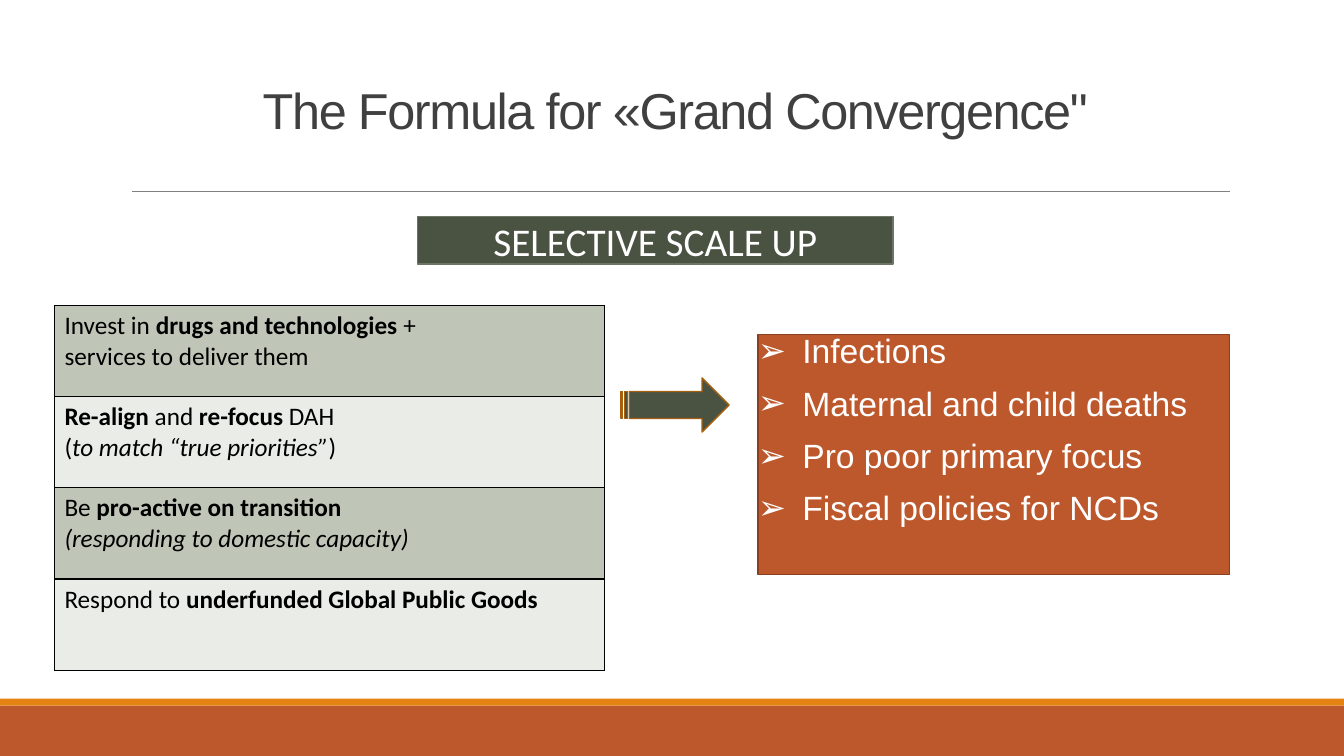
import pptx
import pptx.util
import pptx.dml.color
import pptx.enum.shapes
import pptx.enum.text
import pptx.oxml
import pptx.oxml.ns
from lxml import etree

HUES = {"rust": "BD582C", "brown": "8A4020", "amber": "E48312", "ochre": "A6600D",
        "moss": "4A5242", "sage": "6C7563", "leaf": "BFC6B8", "mist": "EAECE7",
        "grey": "808080", "ink": "404040", "black": "000000", "white": "FFFFFF"}
FORMS = pptx.enum.shapes.MSO_SHAPE
ALIGN = pptx.enum.text.PP_ALIGN
ANCHOR = pptx.enum.text.MSO_ANCHOR
Pt = pptx.util.Pt


def hue(name):
    return pptx.dml.color.RGBColor.from_string(HUES[name])


def node(root, tag, **attrs):
    return etree.SubElement(root, pptx.oxml.ns.qn(tag), attrs)


class Deck:
    """Holds the style and the slide; lengths are percent of the slide's size."""

    def __init__(self):
        self.show = pptx.Presentation()
        self.show.slide_width = pptx.util.Inches(13.33)
        self.show.slide_height = pptx.util.Inches(7.5)
        self.slide = self.show.slides.add_slide(self.show.slide_layouts[5])
        self.shapes = self.slide.shapes

    def box(self, x, y, w, h):
        wide, high = self.show.slide_width, self.show.slide_height
        return [int(part * side / 100)
                for part, side in zip((x, y, w, h), (wide, high, wide, high))]

    def style(self, para, face, size, color):
        font = para.font
        font.name, font.size = face, Pt(size)
        font.color.rgb = hue(color)

    def title(self, text, *place):
        head = self.shapes.title
        head.left, head.top, head.width, head.height = self.box(*place)
        frame = head.text_frame
        frame.vertical_anchor = ANCHOR.BOTTOM
        self.inset(frame, 3.6)
        para = frame.paragraphs[0]
        run = para.add_run()
        run.text = text
        run.font._element.set("spc", "-100")
        para.alignment, para.line_spacing = ALIGN.CENTER, 0.85
        self.style(para, "Arial", 36, "ink")

    def inset(self, frame, gap):
        frame.word_wrap = True
        frame.margin_left = frame.margin_right = Pt(gap)
        frame.margin_top = frame.margin_bottom = Pt(gap)

    def shape(self, form, place, fill, edge=None):
        item = self.shapes.add_shape(form, *self.box(*place))
        item.shadow.inherit = False
        item.fill.solid()
        item.fill.fore_color.rgb = hue(fill)
        if edge:
            item.line.color.rgb = hue(edge)
            item.line.width = Pt(1)
        else:
            item.line.fill.background()
        return item

    def rule(self, left, right, y, color):
        x, top, end, _ = self.box(left, y, right, 0)
        line = self.shapes.add_connector(
            pptx.enum.shapes.MSO_CONNECTOR.STRAIGHT, x, top, end, top)
        line.line.color.rgb = hue(color)
        line.line.width = Pt(0.5)
        node(line._element.spPr, "a:effectLst")

    def label(self, text, place, fill, edge):
        frame = self.shape(FORMS.RECTANGLE, place, fill, edge).text_frame
        self.inset(frame, 0)
        frame.vertical_anchor = ANCHOR.MIDDLE
        para = frame.paragraphs[0]
        para.text, para.alignment = text, ALIGN.CENTER
        self.style(para, "Calibri", 28, "white")

    def bullets(self, lines, place, fill, edge):
        frame = self.shape(FORMS.RECTANGLE, place, fill, edge).text_frame
        self.inset(frame, 0)
        frame.vertical_anchor = ANCHOR.TOP
        frame.text = "\n".join(lines)
        indent = pptx.util.Inches(0.44)
        for para in frame.paragraphs:
            para.alignment, para.line_spacing = ALIGN.LEFT, 0.9
            para.space_after = Pt(11.5)
            props = para._p.get_or_add_pPr()
            props.set("marL", str(indent))
            props.set("indent", str(-indent))
            node(props, "a:buFont", typeface="Arial")
            node(props, "a:buChar", char="➢")
            self.style(para, "Arial", 24, "white")

    def table(self, rows, place, fills):
        frame = self.shapes.add_table(len(rows), 1, *self.box(*place))
        grid = frame.table
        grid.first_row = grid.horz_banding = False
        for spot, lines in enumerate(rows):
            cell = grid.cell(spot, 0)
            cell.fill.solid()
            cell.fill.fore_color.rgb = hue(fills[spot % len(fills)])
            self.border(cell)
            for count, runs in enumerate(lines):
                body = cell.text_frame
                para = body.add_paragraph() if count else body.paragraphs[0]
                self.style(para, "Calibri", 18, "black")
                for text, mark in runs:
                    run = para.add_run()
                    run.text = text
                    run.font.bold = mark == "b"
                    run.font.italic = mark == "i"

    def border(self, cell):
        props = cell._tc.get_or_add_tcPr()
        for spot, side in enumerate(("lnL", "lnR", "lnT", "lnB")):
            line = node(props, "a:" + side, w=str(Pt(1)))
            node(node(line, "a:solidFill"), "a:srgbClr", val=HUES["black"])
            props.insert(spot, line)


def main():
    deck = Deck()

    # Footer bands and rule under the title
    deck.shape(FORMS.RECTANGLE, (0, 93.33, 100, 6.67), "rust")
    deck.shape(FORMS.RECTANGLE, (0, 92.4, 100, 0.93), "amber")
    deck.rule(9.83, 91.55, 25.33, "grey")

    # Title and banner
    deck.title("The Formula for «Grand Convergence\"", 9, 4.13, 82.5, 15.07)
    deck.label("SELECTIVE SCALE UP", (31.05, 28.67, 35.4, 6.27), "moss", "sage")

    # Actions
    deck.table([
        [[("Invest in ", ""), ("drugs and technologies ", "b"), ("+", "")],
         [("services to deliver them", "")]],
        [[("Re-align ", "b"), ("and ", ""), ("re-focus ", "b"), ("DAH", "")],
         [("(", ""), ("to match “true priorities”", "i"), (")", "")]],
        [[("Be ", ""), ("pro-active on transition", "b")],
         [("(responding to domestic capacity)", "i")]],
        [[("Respond to ", ""), ("underfunded Global Public Goods", "b")]],
    ], (4.05, 40.4, 40.95, 48.27), ("leaf", "mist"))

    # Arrow to the outcomes
    deck.shape(FORMS.STRIPED_RIGHT_ARROW, (46.2, 50, 8.05, 7.15), "moss", "ochre")
    deck.bullets(["Infections", "Maternal and child deaths",
                  "Pro poor primary focus", "Fiscal policies for NCDs"],
                 (56.4, 44.27, 35.1, 31.73), "rust", "brown")

    deck.show.save("out.pptx")


if __name__ == "__main__":
    main()
